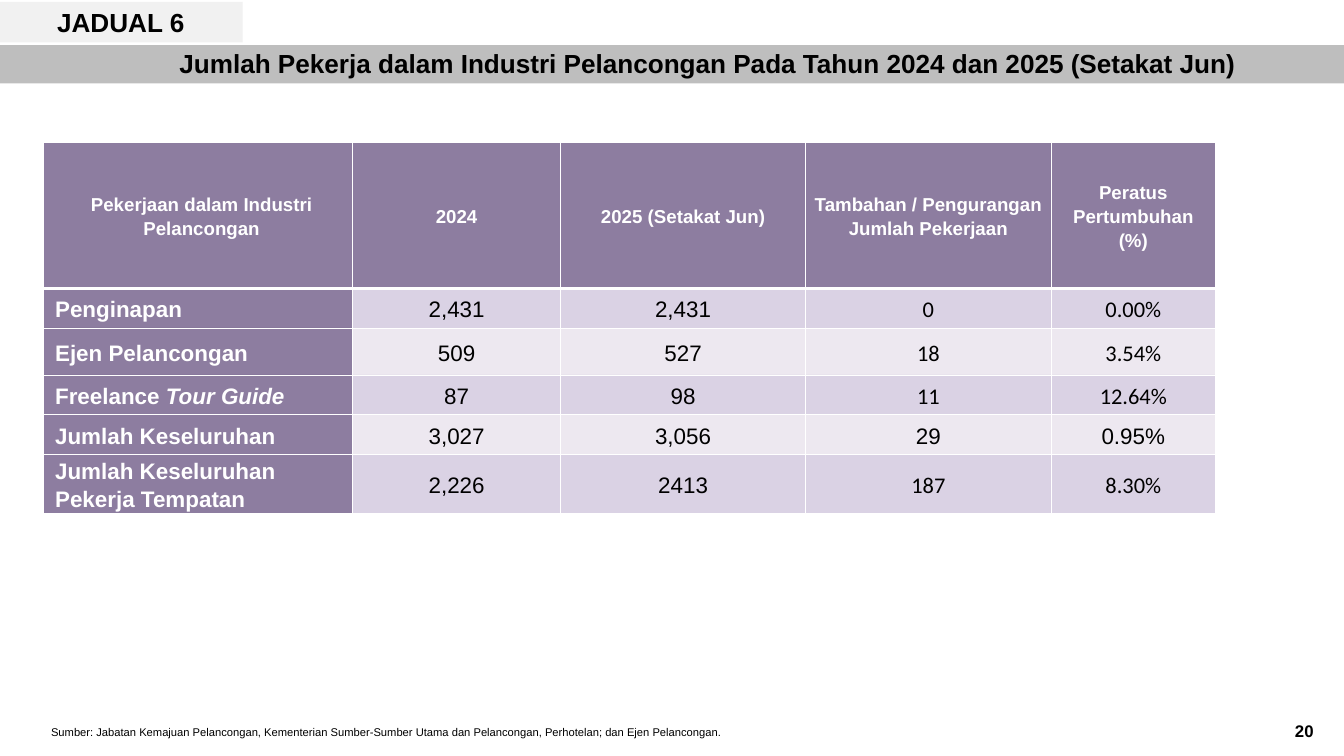
from lxml.etree import SubElement
from pptx import Presentation
from pptx.dml.color import RGBColor
from pptx.enum.shapes import MSO_SHAPE as Shape
from pptx.enum.text import MSO_ANCHOR as Anchor, PP_ALIGN as Align
from pptx.oxml import parse_xml
from pptx.oxml.ns import nsdecls, qn
from pptx.util import Inches, Pt

WHITE = RGBColor(0xFF, 0xFF, 0xFF)
BLACK = RGBColor(0, 0, 0)
PURPLE = RGBColor(0x5F, 0x49, 0x7A)
LILAC = RGBColor(0xCC, 0xC1, 0xDA)
PALE = RGBColor(0xE6, 0xDF, 0xEB)
TITLE_GREY = RGBColor(0xBE, 0xBE, 0xBE)
TAG_GREY = RGBColor(0xF1, 0xF1, 0xF1)
FILL_OPACITY = 71

# Content: one tuple per table row; a label may be (upright, italic)
HEADER = ("Pekerjaan dalam Industri Pelancongan", "2024", "2025 (Setakat Jun)",
          "Tambahan / Pengurangan Jumlah Pekerjaan", "Peratus Pertumbuhan\n(%)")
JOBS = [
    ("Penginapan", "2,431", "2,431", "0", "0.00%"),
    ("Ejen Pelancongan", "509", "527", "18", "3.54%"),
    (("Freelance", " Tour Guide"), "87", "98", "11", "12.64%"),
    ("Jumlah Keseluruhan", "3,027", "3,056", "29", "0.95%"),
    ("Jumlah Keseluruhan Pekerja Tempatan", "2,226", "2413", "187", "8.30%"),
]
TOTAL_ROW = 4
COLUMN_WIDTHS = (4.6, 3.09, 3.65, 3.65, 2.45)
ROW_HEIGHTS = (2.17, 0.59, 0.7, 0.59, 0.59, 0.88)

# Bands: left, top, width, height, colour
BANDS = [(0, 0.67, 20, 0.57, TITLE_GREY), (0, 0.03, 3.61, 0.6, TAG_GREY)]

# Texts: wording, left, top, width, height, top inset, indent, size, bold, spacing
TEXTS = [
    ("Jumlah Pekerja dalam Industri Pelancongan Pada Tahun 2024 dan 2025 (Setakat Jun)",
     2.66, 0.7, 16.1, 0.48, 0.01, 0.01, 28, True, 1),
    ("JADUAL 6", 0.84, 0.08, 1.92, 0.49, 0.01, 0.01, 28, True, 1),
    ("20", 19.23, 10.68, 0.48, 0.31, 0, 0.04, 18, True, 1.16),
    ("Sumber: Jabatan Kemajuan Pelancongan, Kementerian Sumber-Sumber Utama dan "
     "Pelancongan, Perhotelan; dan Ejen Pelancongan.",
     0.75, 10.75, 10.03, 0.21, 0, 0.01, 12, False, 1.19),
]


def style_font(font, name, size, color, bold):
    font.name, font.size, font.bold = name, Pt(size), bold
    font.color.rgb = color


def indent(paragraph, inches):
    paragraph._p.get_or_add_pPr().set("marL", str(Inches(inches)))


def set_borders(cell, top, bottom):
    tc_pr = cell._tc.get_or_add_tcPr()
    sides = {"lnL": 1, "lnR": 1, "lnT": top, "lnB": bottom}
    for position, (side, width) in enumerate(sides.items()):
        tc_pr.insert(position, parse_xml(
            f'<a:{side} {nsdecls("a")} w="{Pt(width)}"><a:solidFill>'
            f'<a:srgbClr val="{WHITE}"/></a:solidFill></a:{side}>'))


def fill_cell(cell, color):
    cell.fill.solid()
    cell.fill.fore_color.rgb = color
    rgb = cell._tc.tcPr.find(qn("a:solidFill")).find(qn("a:srgbClr"))
    SubElement(rgb, qn("a:alpha")).set("val", str(FILL_OPACITY * 1000))


def write_cell(cell, content, row, column):
    is_header, is_label = row == 0, column == 0
    is_purple = is_header or is_label
    cell.vertical_anchor = Anchor.MIDDLE
    cell.margin_left = cell.margin_right = Inches(0.07)
    cell.margin_top = cell.margin_bottom = 0
    set_borders(cell, 3 if row == 1 else 1, 3 if is_header else 1)
    fill_cell(cell, PURPLE if is_purple else LILAC if row % 2 else PALE)

    upright, italic = (content, "") if isinstance(content, str) else content
    cell.text_frame.text = upright
    if italic:
        run = cell.text_frame.paragraphs[0].add_run()
        run.text = italic
        run.font.italic = True
    calibri = column >= 3 and not is_header and row != TOTAL_ROW
    for paragraph in cell.text_frame.paragraphs:
        paragraph.line_spacing = 1.15
        paragraph.alignment = Align.LEFT if is_label and not is_header else Align.CENTER
        if is_label:
            indent(paragraph, 0.1)
        for run in paragraph.runs:
            style_font(run.font, "Calibri" if calibri else "Arial",
                       20 if is_header else 24, WHITE if is_purple else BLACK, is_purple)


def main():
    deck = Presentation()
    deck.slide_width, deck.slide_height = Inches(20), Inches(11.25)
    slide = deck.slides.add_slide(deck.slide_layouts[6])

    # Employment table
    rows = [HEADER, *JOBS]
    jobs_table = slide.shapes.add_table(
        len(rows), len(HEADER), Inches(0.65), Inches(2.12),
        Inches(sum(COLUMN_WIDTHS)), Inches(sum(ROW_HEIGHTS))).table
    for column, width in zip(jobs_table.columns, COLUMN_WIDTHS):
        column.width = Inches(width)
    for table_row, height in zip(jobs_table.rows, ROW_HEIGHTS):
        table_row.height = Inches(height)
    for r, row in enumerate(rows):
        for c, content in enumerate(row):
            write_cell(jobs_table.cell(r, c), content, r, c)

    # Heading bands
    for *place, color in BANDS:
        band = slide.shapes.add_shape(Shape.RECTANGLE, *map(Inches, place))
        band.shadow.inherit = False
        band.fill.solid()
        band.fill.fore_color.rgb = color
        band.line.fill.background()

    # Headings, page number and source
    for wording, *place, inset, margin, size, bold, spacing in TEXTS:
        frame = slide.shapes.add_textbox(*map(Inches, place)).text_frame
        frame.word_wrap = True
        frame.margin_left = frame.margin_right = frame.margin_bottom = 0
        frame.margin_top = Inches(inset)
        frame.text = wording
        paragraph = frame.paragraphs[0]
        paragraph.line_spacing = spacing
        indent(paragraph, margin)
        style_font(paragraph.runs[0].font, "Arial", size, BLACK, bold)

    deck.save("out.pptx")


if __name__ == "__main__":
    main()
